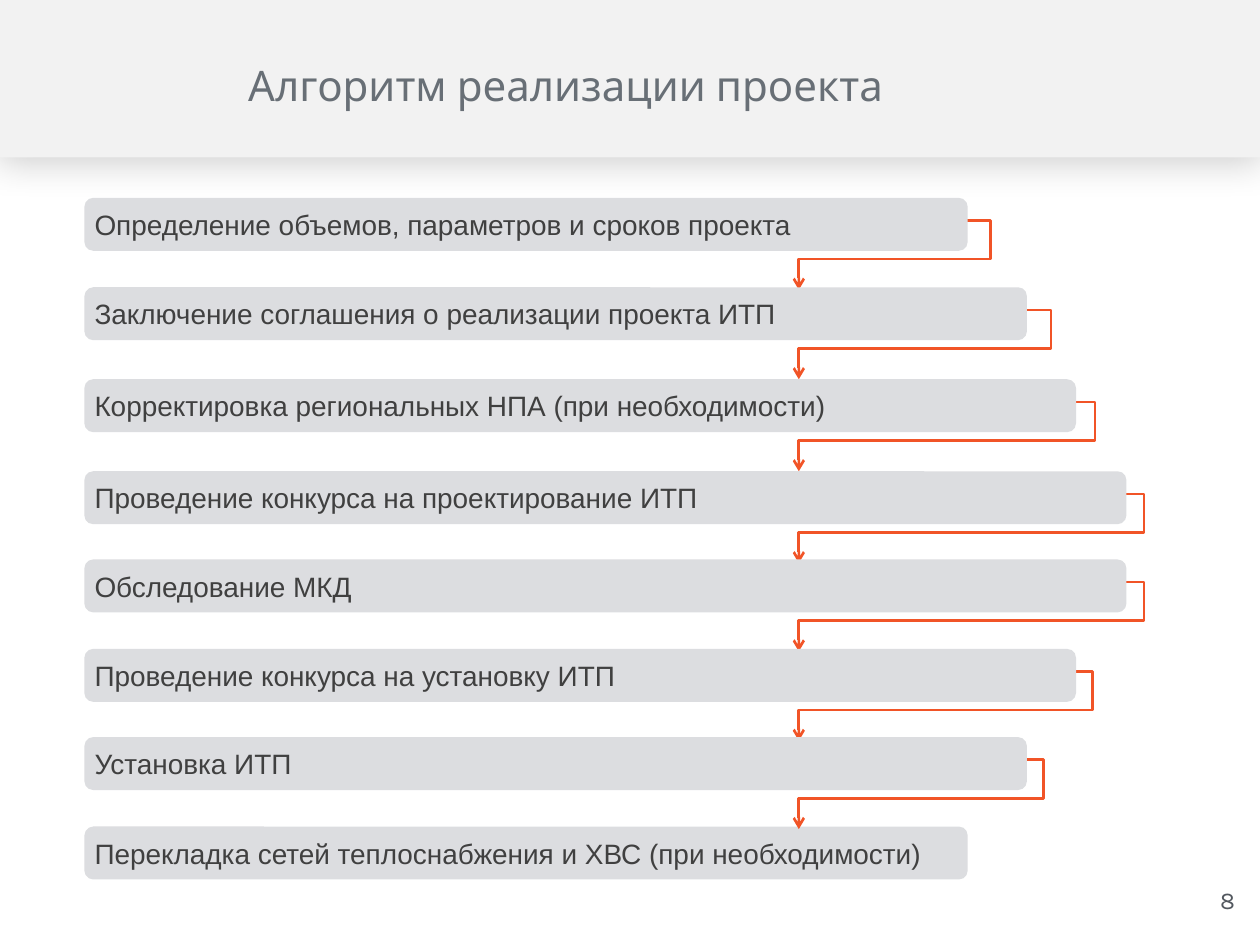
from lxml.etree import SubElement
from pptx import Presentation
from pptx.dml.color import RGBColor
from pptx.enum.shapes import MSO_CONNECTOR, MSO_SHAPE
from pptx.enum.text import MSO_ANCHOR, PP_ALIGN
from pptx.oxml.ns import qn
from pptx.util import Inches, Pt

WIDE, HIGH = 10, 7.5
LEFT, TALL = 0.67, 0.42
DROP_X, DROP, RUN = 6.34, 0.55, 0.39

STEPS = [
    ("Определение объемов, параметров и сроков проекта", 1.57, 7.01, 7.86),
    ("Заключение соглашения о реализации проекта ИТП", 2.28, 7.48, 8.34),
    ("Корректировка региональных НПА (при необходимости)", 3.01, 7.87, 8.69),
    ("Проведение конкурса на проектирование ИТП", 3.74, 8.27, 9.08),
    ("Обследование МКД", 4.44, 8.27, 9.08),
    ("Проведение конкурса на установку ИТП", 5.15, 7.87, 8.67),
    ("Установка ИТП", 5.85, 7.48, 8.28),
    ("Перекладка сетей теплоснабжения и ХВС (при необходимости)", 6.56, 7.01, None),
]


def color(code):
    return RGBColor.from_string(code)


def place(box):
    return [Inches(part) for part in box]


def write(shape, text, size, tint, font="Karla", align=PP_ALIGN.LEFT,
          anchor=MSO_ANCHOR.MIDDLE, inset=(0, 0, 0, 0)):
    frame = shape.text_frame
    frame.word_wrap = True
    frame.vertical_anchor = anchor
    (frame.margin_left, frame.margin_top,
     frame.margin_right, frame.margin_bottom) = place(inset)
    para = frame.paragraphs[0]
    para.alignment = align
    run = para.add_run()
    run.text = text
    run.font.size = Pt(size)
    run.font.name = font
    run.font.color.rgb = color(tint)


def block(slide, kind, box, fill):
    shape = slide.shapes.add_shape(kind, *place(box))
    shape.shadow.inherit = False
    shape.fill.solid()
    shape.fill.fore_color.rgb = color(fill)
    shape.line.fill.background()
    return shape


def shade(shape):
    effects = shape._element.spPr.find(qn("a:effectLst"))
    outer = SubElement(effects, qn("a:outerShdw"), blurRad=str(Pt(21)),
                       dist=str(Pt(3)), dir="5400000", algn="t", rotWithShape="0")
    tint = SubElement(outer, qn("a:srgbClr"), val="000000")
    SubElement(tint, qn("a:alpha"), val="19000")


def header(slide, box):
    shade(block(slide, MSO_SHAPE.RECTANGLE, box, "F2F2F2"))
    title = slide.shapes.add_textbox(*place((1.97, 0.27, 7.35, 0.8)))
    write(title, "Алгоритм реализации проекта", 24, "686F76")


def step(slide, text, box):
    shape = block(slide, MSO_SHAPE.ROUNDED_RECTANGLE, box, "DCDDE0")
    write(shape, text, 16, "404040", font="Arial", inset=[0.06] * 4)


def arrow(slide, top, turn):
    start = DROP_X + RUN
    link = slide.shapes.add_connector(
        MSO_CONNECTOR.ELBOW, *place((start, top, DROP_X, top + DROP)))
    link.line.color.rgb = color("F15427")
    link.line.width = Pt(1.5)
    props = link._element.spPr
    shape = props.find(qn("a:prstGeom"))
    shape.set("prst", "bentConnector4")
    guides = shape.find(qn("a:avLst"))
    if guides is None:
        guides = SubElement(shape, qn("a:avLst"))
    for name, share in (("adj1", (start - turn) / RUN), ("adj2", 0.556)):
        SubElement(guides, qn("a:gd"), name=name, fmla=f"val {round(share * 100000)}")
    SubElement(props.find(qn("a:ln")), qn("a:tailEnd"), type="arrow")
    SubElement(props, qn("a:effectLst"))


def flow(slide, steps):
    for text, top, width, turn in steps[-1:] + steps[:-1]:
        if turn:
            arrow(slide, top + 0.18, turn)
        step(slide, text, (LEFT, top, width, TALL))


def footer(slide, box):
    page = slide.shapes.add_textbox(*place(box))
    write(page, "8", 13.8, "53585F", align=PP_ALIGN.RIGHT,
          anchor=MSO_ANCHOR.BOTTOM, inset=(0, 0, 0, 0.02))


def main():
    deck = Presentation()
    deck.slide_width, deck.slide_height = place((WIDE, HIGH))
    slide = deck.slides.add_slide(deck.slide_layouts[6])
    header(slide, (-0.01, -0.01, WIDE + 0.02, 1.26))
    flow(slide, STEPS)
    footer(slide, (9.31, 7.06, 0.49, 0.22))
    deck.save("out.pptx")


if __name__ == "__main__":
    main()
